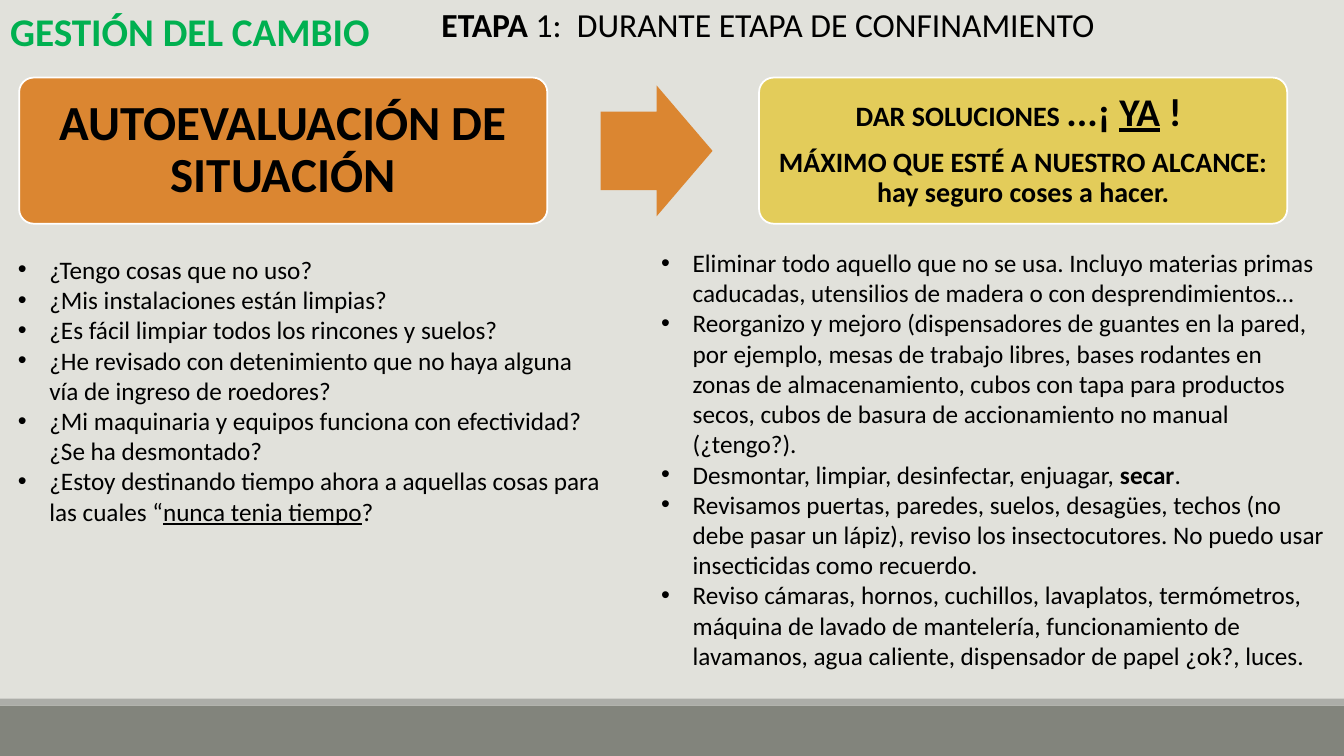
from lxml.etree import SubElement
from pptx import Presentation
from pptx.dml.color import RGBColor
from pptx.enum.shapes import MSO_SHAPE as SHAPE
from pptx.enum.text import MSO_ANCHOR as ANCHOR, MSO_AUTO_SIZE as AUTO, PP_ALIGN as ALIGN
from pptx.oxml.ns import qn
from pptx.util import Pt

COLORS = {
    "background": "E1E1DB", "footer": "82847C", "footer_edge": "ACADA8",
    "orange": "DB8631", "yellow": "E3CC5A", "green": "00B050",
    "black": "000000", "white": "FFFFFF",
}

QUESTIONS = [
    ["¿Tengo cosas que no uso?"],
    ["¿Mis instalaciones están limpias?"],
    ["¿Es fácil limpiar todos los rincones y suelos?"],
    ["¿He revisado con detenimiento que no haya alguna vía de ingreso de roedores?"],
    ["¿Mi maquinaria y equipos funciona con efectividad? ¿Se ha desmontado?"],
    ["¿Estoy destinando tiempo ahora a aquellas cosas para las cuales “",
     ("nunca tenia tiempo", {"underline": True}), "?"],
]
ACTIONS = [
    ["Eliminar todo aquello que no se usa. Incluyo materias primas caducadas, "
     "utensilios de madera o con desprendimientos…"],
    ["Reorganizo y mejoro (dispensadores de guantes en la pared, por ejemplo, mesas de "
     "trabajo libres, bases rodantes en zonas de almacenamiento, cubos con tapa para "
     "productos secos, cubos de basura de accionamiento no manual (¿tengo?)."],
    ["Desmontar, limpiar, desinfectar, enjuagar, ", ("secar", {"bold": True}), "."],
    ["Revisamos puertas, paredes, suelos, desagües, techos (no debe pasar un lápiz), "
     "reviso los insectocutores. No puedo usar insecticidas como recuerdo."],
    ["Reviso cámaras, hornos, cuchillos, lavaplatos, termómetros, máquina de lavado de "
     "mantelería, funcionamiento de lavamanos, agua caliente, dispensador de papel ¿ok?, "
     "luces."],
]
BIG = {"size": 28}
SOLUTIONS = [
    ["DAR SOLUCIONES ", ("...¡ ", BIG), ("YA", {**BIG, "underline": True}), (" ! ", BIG)],
    ["MÁXIMO QUE ESTÉ A NUESTRO ALCANCE: hay seguro coses a hacer."],
]


class SlideBuilder:
    font = "Calibri"
    indent = 22.5

    def __init__(self, slide):
        self.s = slide
        fill = slide.background.fill
        fill.solid()
        fill.fore_color.rgb = self.rgb("background")

    def rgb(self, name):
        return RGBColor.from_string(COLORS[name])

    def add_runs(self, tf, paragraphs, size, color="black", bold=False, align=ALIGN.LEFT,
                 line_spacing=1.0, space_after=0, bullets=False):
        """Fill a frame; each paragraph lists strings or (string, overrides) pairs."""
        tf.word_wrap = True
        for i, runs in enumerate(paragraphs):
            p = tf.paragraphs[0] if i == 0 else tf.add_paragraph()
            p.alignment = align
            p.line_spacing = line_spacing
            p.space_after = Pt(space_after)
            if bullets:
                self.bullet(p)
            for run in runs:
                text, extra = (run, {}) if isinstance(run, str) else run
                r = p.add_run()
                r.text = text
                r.font.name = self.font
                r.font.size = Pt(extra.get("size", size))
                r.font.bold = extra.get("bold", bold)
                r.font.underline = extra.get("underline", False)
                r.font.color.rgb = self.rgb(color)

    def bullet(self, p):
        props = p._p.get_or_add_pPr()
        props.set("marL", str(Pt(self.indent)))
        props.set("indent", str(-Pt(self.indent)))
        SubElement(props, qn("a:buFont")).set("typeface", "Arial")
        SubElement(props, qn("a:buChar")).set("char", "•")

    def title(self, box, text, **style):
        sp = self.s.shapes.title
        sp.left, sp.top, sp.width, sp.height = map(Pt, box)
        tf = sp.text_frame
        tf.auto_size = AUTO.NONE
        tf.vertical_anchor = ANCHOR.TOP
        self.add_runs(tf, [[text]], **style)

    def text(self, box, paragraphs, **style):
        sp = self.s.shapes.add_textbox(*map(Pt, box))
        self.add_runs(sp.text_frame, paragraphs, **style)

    def shape(self, kind, box, fill, adjustments=(), line=None):
        sp = self.s.shapes.add_shape(kind, *map(Pt, box))
        sp.shadow.inherit = False
        for i, value in enumerate(adjustments):
            sp.adjustments[i] = value
        sp.fill.solid()
        sp.fill.fore_color.rgb = self.rgb(fill)
        if line:
            sp.line.color.rgb = self.rgb(line)
            sp.line.width = Pt(1.25)
        else:
            sp.line.fill.background()
        return sp

    def card(self, left, fill, paragraphs, inset, **style):
        box = (left, 55.4, 377.3, 104.4)
        tf = self.shape(SHAPE.ROUNDED_RECTANGLE, box, fill, [0.1], "white").text_frame
        tf.vertical_anchor = ANCHOR.MIDDLE
        tf.margin_left = tf.margin_right = tf.margin_top = tf.margin_bottom = Pt(inset)
        self.add_runs(tf, paragraphs, bold=True, align=ALIGN.CENTER, line_spacing=0.9, **style)


def main():
    prs = Presentation()
    prs.slide_width, prs.slide_height = Pt(960), Pt(540)
    s = SlideBuilder(prs.slides.add_slide(prs.slide_layouts[5]))

    s.shape(SHAPE.RECTANGLE, (0, 504, 960, 36), "footer")
    s.shape(SHAPE.RECTANGLE, (0, 499, 960, 5), "footer_edge")

    s.card(13.7, "orange", [["AUTOEVALUACIÓN DE SITUACIÓN"]], 10.8, size=35)
    s.shape(SHAPE.RIGHT_ARROW, (429, 61, 80, 93.6), "orange", [0.6, 0.5])
    s.card(542.2, "yellow", SOLUTIONS, 5.8, size=20, space_after=9.8)

    s.title((0, 1.4, 394.6, 41), "GESTIÓN DEL CAMBIO", size=28, color="green", bold=True)
    s.text((308.2, -0.7, 622.8, 36),
           [[("ETAPA", {"bold": True}), " 1:  DURANTE ETAPA DE CONFINAMIENTO"]], size=24)
    s.text((5.6, 178, 432.7, 247), QUESTIONS, size=18, bullets=True)
    s.text((465.2, 173, 488.9, 334), ACTIONS, size=18, bullets=True)

    prs.save("out.pptx")


if __name__ == "__main__":
    main()
